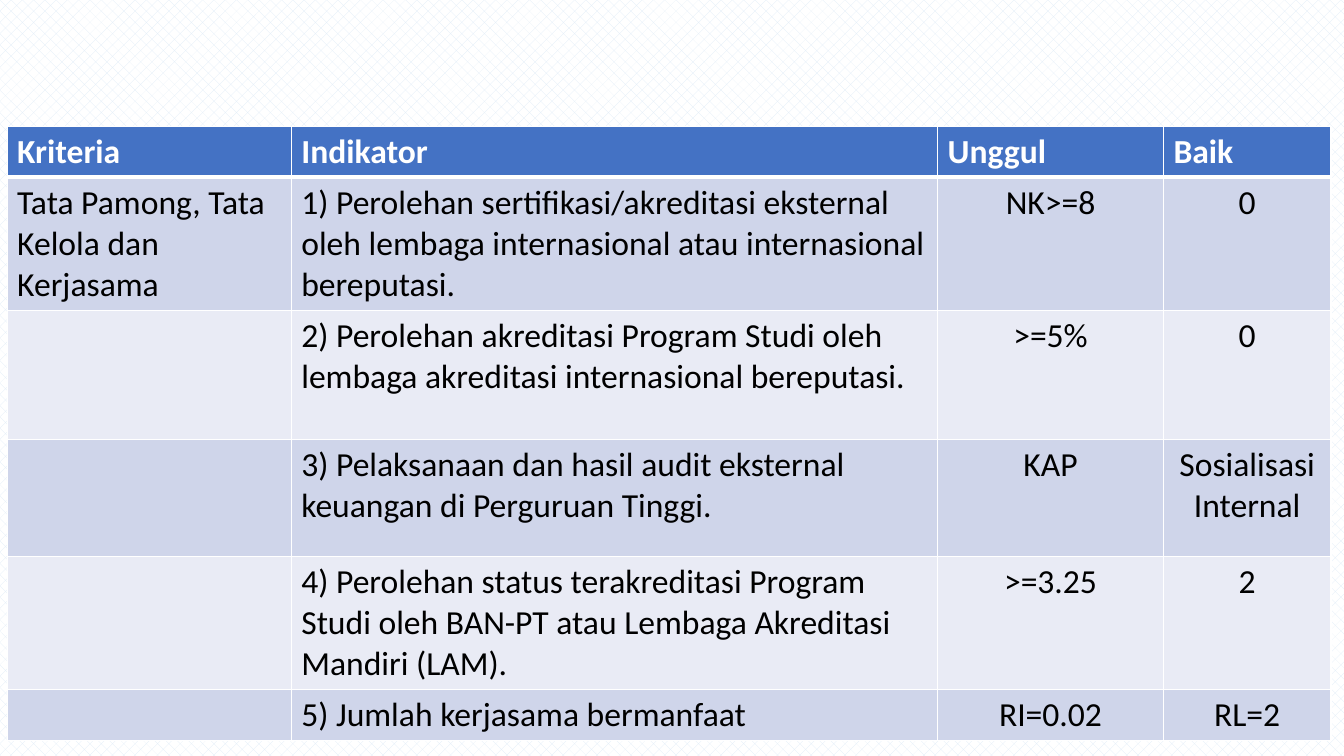
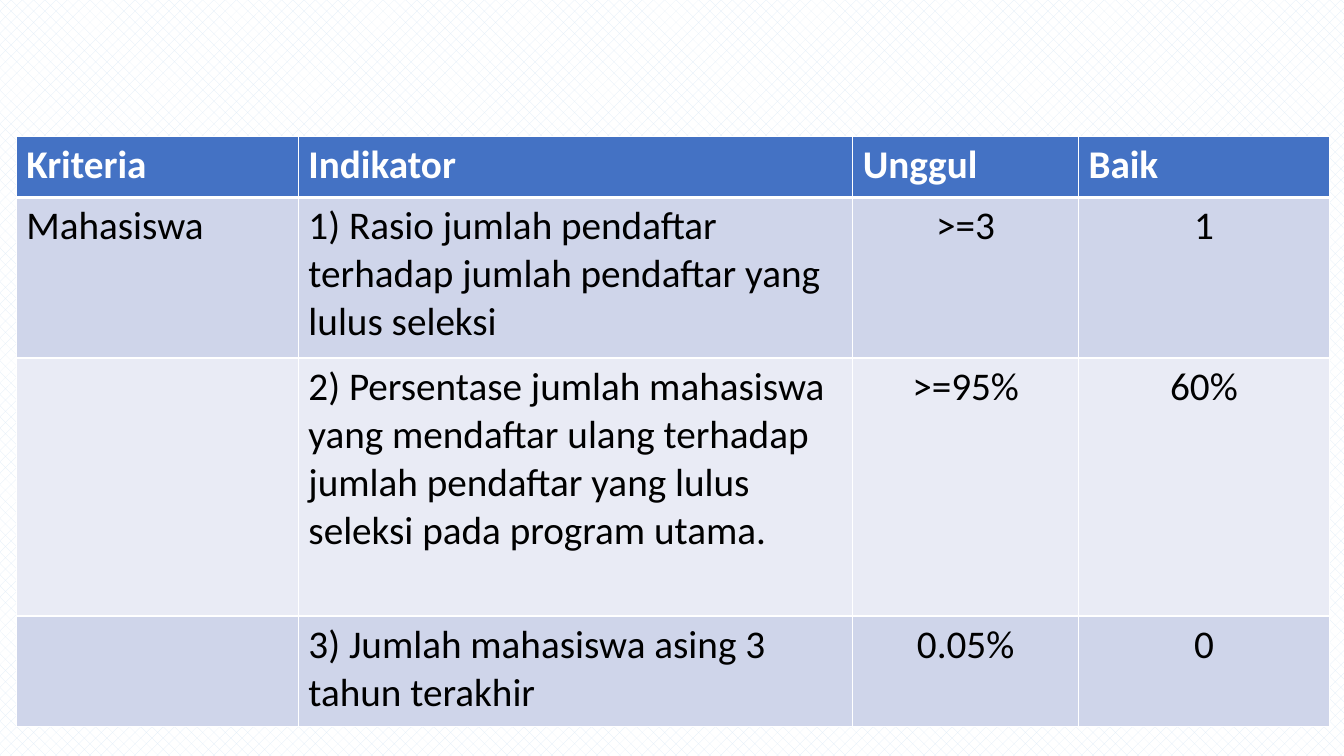
from lxml import etree
from pptx import Presentation
from pptx.dml.color import RGBColor
from pptx.enum import dml, text
from pptx.oxml.ns import qn
from pptx.util import Cm, Pt

# Shared look
COLORS = {"header": "4472C4", "odd": "CFD5EA", "even": "E9EBF5",
          "white": "FFFFFF", "black": "000000", "hatch": "DEEBF7"}
COLORS_RGB = {name: RGBColor.from_string(value) for name, value in COLORS.items()}
HEADER = ["Kriteria", "Indikator", "Unggul", "Baik"]

# Slide content; lengths in centimetres
SLIDES = [
    {
        "left": 0.18, "top": 3.18, "size": 24,
        "cols": [7.16, 16.29, 5.69, 4.22],
        "heights": [1.24, 3.25, 3.25, 2.95, 3.25, 1.24],
        "rows": [
            ["Tata Pamong, Tata Kelola dan Kerjasama",
             "1) Perolehan sertifikasi/akreditasi eksternal oleh lembaga "
             "internasional atau internasional bereputasi.", "NK>=8", "0"],
            ["", "2) Perolehan akreditasi Program Studi oleh lembaga "
             "akreditasi internasional bereputasi.", ">=5%", "0"],
            ["", "3) Pelaksanaan dan hasil audit eksternal keuangan di "
             "Perguruan Tinggi.", "KAP", "Sosialisasi Internal"],
            ["", "4) Perolehan status terakreditasi Program Studi oleh BAN-PT "
             "atau Lembaga Akreditasi Mandiri (LAM).", ">=3.25", "2"],
            ["", "5) Jumlah kerjasama bermanfaat", "RI=0.02", "RL=2"],
        ],
    },
    {
        "left": 0.41, "top": 3.43, "size": 28,
        "cols": [7.11, 13.97, 5.69, 6.32],
        "heights": [1.55, 4.04, 6.5, 2.79],
        "rows": [
            ["Mahasiswa", "1) Rasio jumlah pendaftar terhadap jumlah pendaftar "
             "yang lulus seleksi", ">=3", "1"],
            ["", "2) Persentase jumlah mahasiswa yang mendaftar ulang terhadap "
             "jumlah pendaftar yang lulus seleksi pada program utama.",
             ">=95%", "60%"],
            ["", "3) Jumlah mahasiswa asing 3 tahun terakhir", "0.05%", "0"],
        ],
    },
]


def set_borders(cell, widths):
    """Draw white cell borders; widths maps each side to points."""
    tcPr = cell._tc.get_or_add_tcPr()
    for side, width in widths.items():
        ln = etree.SubElement(tcPr, qn(f"a:ln{side}"), w=str(Pt(width)))
        fill = etree.SubElement(ln, qn("a:solidFill"))
        etree.SubElement(fill, qn("a:srgbClr"), val=COLORS["white"])


def fill_cell(cell, content, row, col, size):
    """Format one cell as header or banded body."""
    is_header = row == 0
    set_borders(cell, {"L": 1, "R": 1, "T": 3 if row == 1 else 1,
                       "B": 3 if is_header else 1})
    band = "header" if is_header else "odd" if row % 2 else "even"
    cell.fill.solid()
    cell.fill.fore_color.rgb = COLORS_RGB[band]
    if not content:
        return
    p = cell.text_frame.paragraphs[0]
    if not is_header and col >= 2:
        p.alignment = text.PP_ALIGN.CENTER
    r = p.add_run()
    r.text = content
    for name, value in {"name": "Calibri", "size": Pt(size), "bold": is_header}.items():
        setattr(r.font, name, value)
    r.font.color.rgb = COLORS_RGB["white" if is_header else "black"]


prs = Presentation()
prs.slide_width, prs.slide_height = Cm(33.87), Cm(19.05)

# Hatched background on the master
bg = prs.slide_master.background.fill
bg.patterned()
bg.pattern = dml.MSO_PATTERN.PERCENT_25
bg.fore_color.rgb = COLORS_RGB["hatch"]
bg.back_color.rgb = COLORS_RGB["white"]

# One criteria table per slide
for spec_table in SLIDES:
    s = prs.slides.add_slide(prs.slide_layouts[6])
    rows = [HEADER] + spec_table["rows"]
    cols, heights = spec_table["cols"], spec_table["heights"]
    table = s.shapes.add_table(
        len(rows), len(cols), Cm(spec_table["left"]), Cm(spec_table["top"]),
        Cm(sum(cols)), Cm(sum(heights))).table
    for column, width in zip(table.columns, cols):
        column.width = Cm(width)
    for i, (contents, height) in enumerate(zip(rows, heights)):
        table.rows[i].height = Cm(height)
        for j, content in enumerate(contents):
            fill_cell(table.cell(i, j), content, i, j, spec_table["size"])

prs.save("out.pptx")
